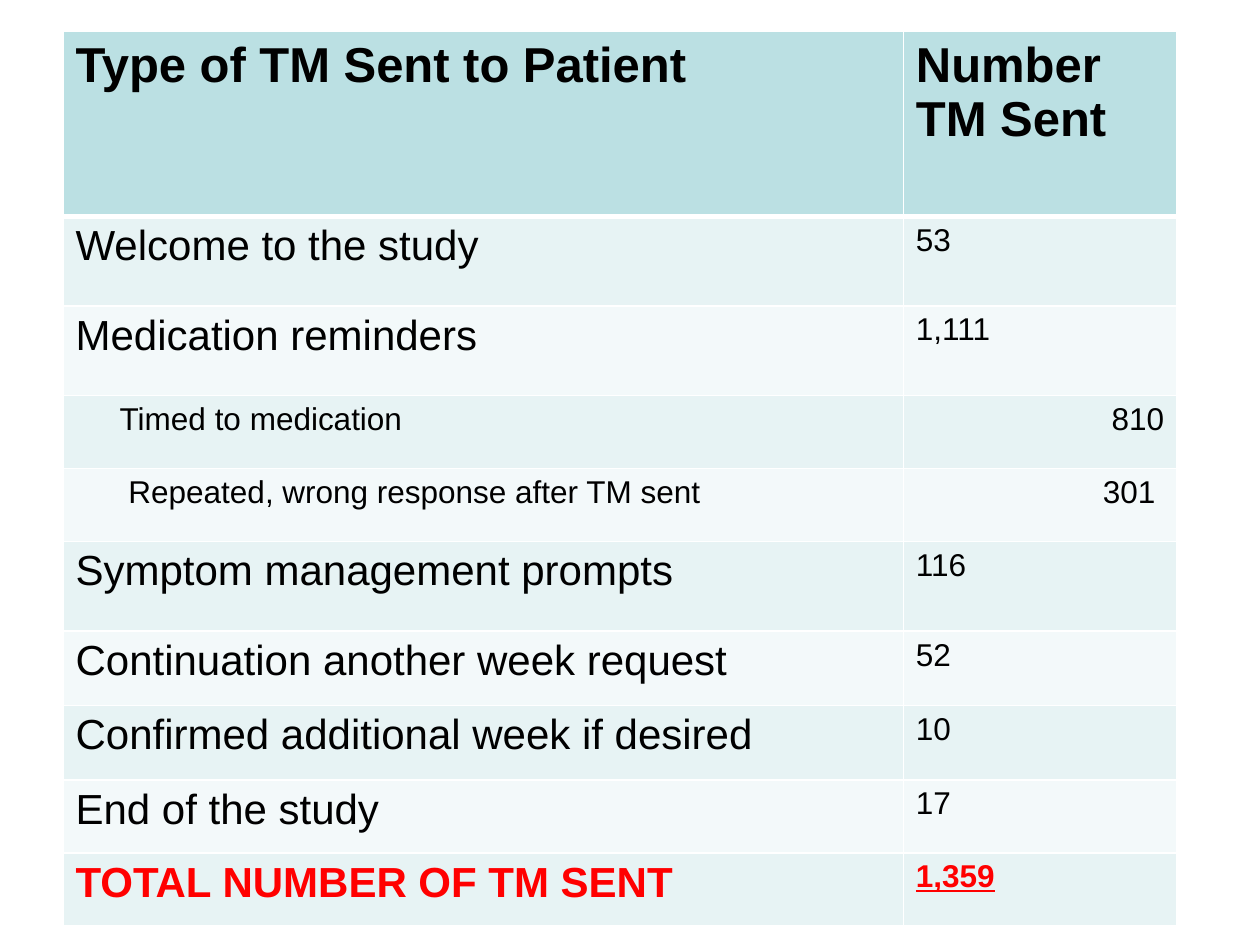
from lxml import etree
from pptx import Presentation
from pptx.dml.color import RGBColor
from pptx.enum.text import PP_ALIGN
from pptx.oxml.ns import qn
from pptx.util import Inches, Pt

RIGHT = PP_ALIGN.RIGHT
BLANK_LAYOUT = 6
COLORS = {
    "header": "BBE0E3",
    "odd": "E7F3F4",
    "even": "F3F9FA",
    "border": "FFFFFF",
    "text": "000000",
    "total": "FF0000",
}
COLUMN_WIDTHS = (6.67, 2.17)
MESSAGE_ROWS = (
    ("Type of TM Sent to Patient", "Number TM Sent", 1.47, "header"),
    ("Welcome to the study", "53", 0.71, "main"),
    ("Medication reminders", "1,111", 0.71, "main"),
    ("Timed to medication", "810", 0.58, "detail"),
    ("Repeated, wrong response after TM sent", "301", 0.58, "detail"),
    ("Symptom management prompts", "116", 0.71, "main"),
    ("Continuation another week request", "52", 0.59, "main"),
    ("Confirmed additional week if desired", "10", 0.59, "main"),
    ("End of the study", "17", 0.58, "main"),
    ("TOTAL NUMBER OF TM SENT", "1,359", 0.58, "total"),
)
SIZES = {"header": (28, 28), "main": (24, 18), "detail": (18, 18), "total": (24, 18)}
DETAIL_MARGINS = {"Timed to medication": 0.45, "Repeated, wrong response after TM sent": 0.52, "301": 0.17}


def set_borders(cell, top, bottom):
    """Draw the cell's four borders, with the given top and bottom widths in points."""
    properties = cell._tc.get_or_add_tcPr()
    widths = (("a:lnL", 1), ("a:lnR", 1), ("a:lnT", top), ("a:lnB", bottom))
    for position, (tag, width) in enumerate(widths):
        line = etree.Element(qn(tag), w=str(Pt(width)))
        fill = etree.SubElement(line, qn("a:solidFill"))
        etree.SubElement(fill, qn("a:srgbClr"), val=COLORS["border"])
        properties.insert(position, line)


def fill_cell(cell, text, size, kind, band):
    """Write one cell's text and set its font and background."""
    cell.fill.solid()
    cell.fill.fore_color.rgb = RGBColor.from_string(COLORS[band])
    cell.text_frame.text = text
    font = cell.text_frame.paragraphs[0].runs[0].font
    font.name = "Arial"
    font.size = Pt(size)
    font.bold = kind in ("header", "total")
    font.color.rgb = RGBColor.from_string(COLORS["total" if kind == "total" else "text"])


def add_message_table(slide):
    """Add the table of text messages by type."""
    total_height = sum(height for _, _, height, _ in MESSAGE_ROWS)
    table = slide.shapes.add_table(
        len(MESSAGE_ROWS), len(COLUMN_WIDTHS), Inches(0.5), Inches(0.25),
        Inches(sum(COLUMN_WIDTHS)), Inches(total_height),
    ).table
    for column, width in zip(table.columns, COLUMN_WIDTHS):
        column.width = Inches(width)
    for index, (message, count, height, kind) in enumerate(MESSAGE_ROWS):
        table.rows[index].height = Inches(height)
        band = "header" if index == 0 else ("even", "odd")[index % 2]
        message_cell, count_cell = table.rows[index].cells
        for cell, text, size in zip((message_cell, count_cell), (message, count), SIZES[kind]):
            fill_cell(cell, text, size, kind, band)
            set_borders(cell, 3 if index == 1 else 1, 3 if index == 0 else 1)
        if kind == "detail":
            message_cell.margin_left = Inches(DETAIL_MARGINS[message])
            count_cell.margin_right = Inches(DETAIL_MARGINS.get(count, 0.1))
            count_cell.text_frame.paragraphs[0].alignment = RIGHT
        if kind == "total":
            count_cell.text_frame.paragraphs[0].runs[0].font.underline = True


def main():
    """Build and save the slide."""
    presentation = Presentation()
    presentation.slide_width = Inches(10)
    presentation.slide_height = Inches(7.5)
    slide = presentation.slides.add_slide(presentation.slide_layouts[BLANK_LAYOUT])
    add_message_table(slide)
    presentation.save("out.pptx")


if __name__ == "__main__":
    main()
